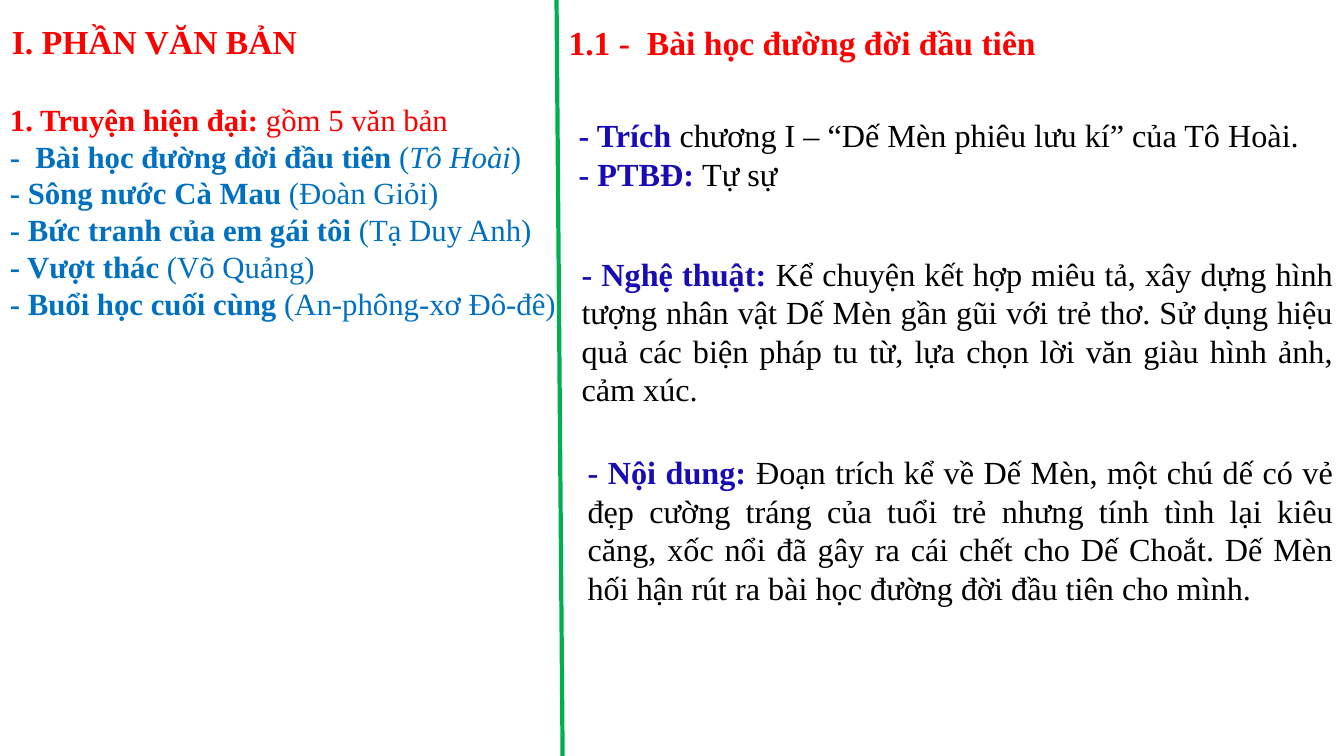
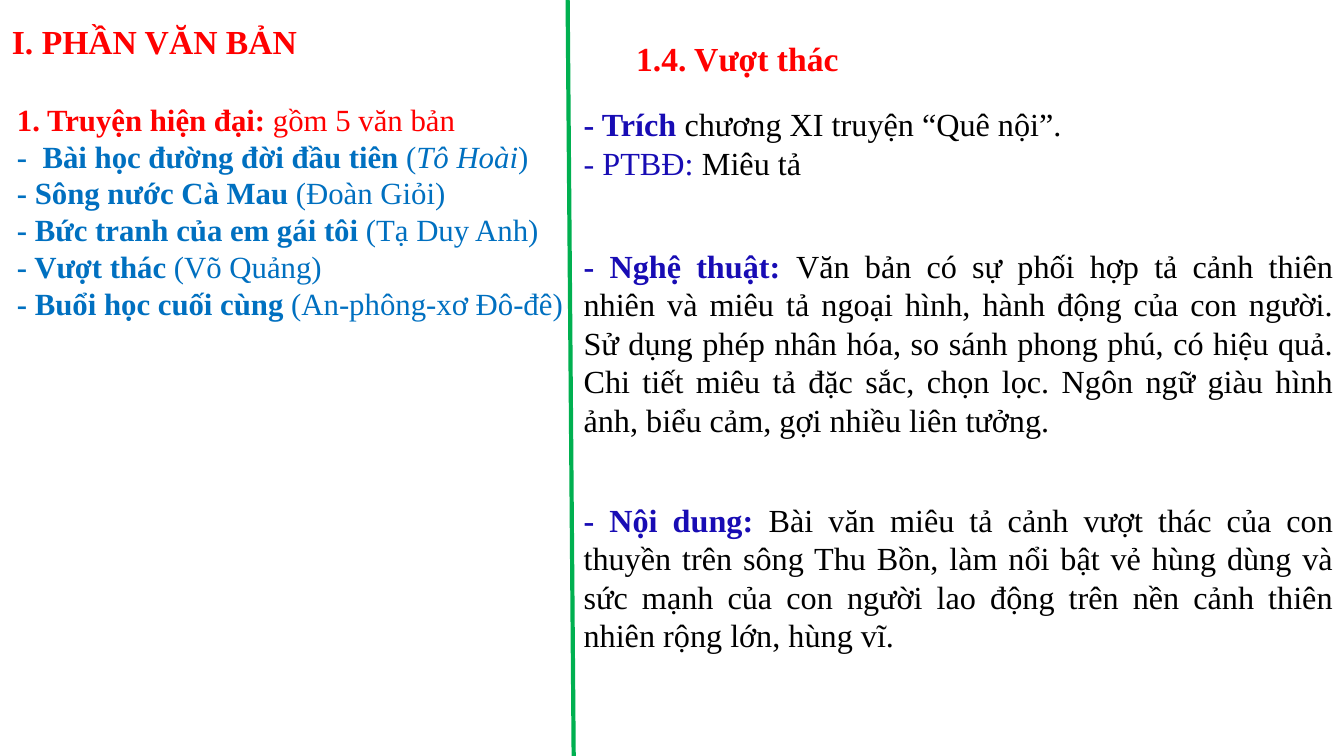
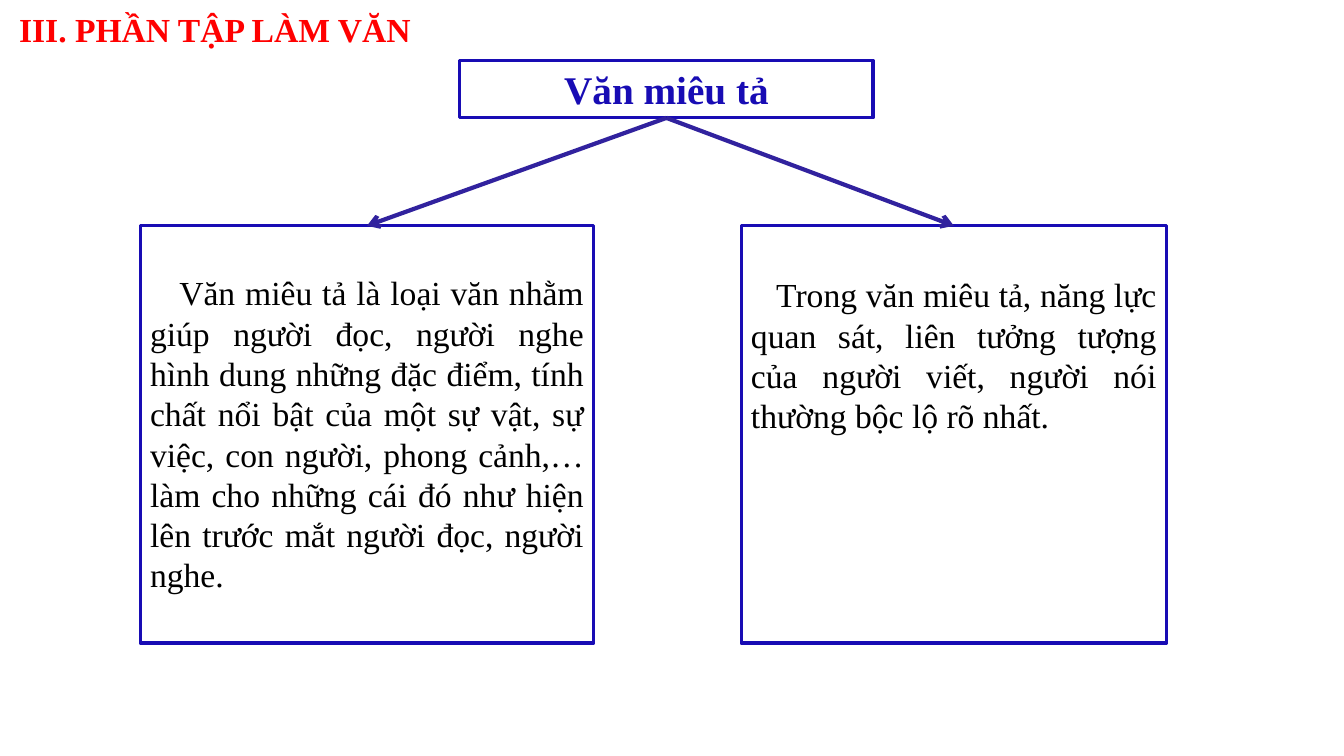
from dataclasses import dataclass, field

from lxml import etree
from pptx import Presentation
from pptx import util as u
from pptx.dml.color import RGBColor
from pptx.enum import shapes, text
from pptx.oxml import ns

# Grid: one column or row is a tenth of an inch.
COLS, ROWS = 133.3, 75
LEFT, MID, FULL = text.PP_ALIGN.LEFT, text.PP_ALIGN.CENTER, text.PP_ALIGN.JUSTIFY


def cell(n):
    return u.Inches(n / 10)


def look(size, color, bold=False, italic=False):
    return dict(size=u.Pt(size), bold=bold, italic=italic, color=color)


@dataclass(frozen=True)
class Theme:
    font: str = "Times New Roman"
    white: str = "FFFFFF"
    blue: str = "180CB4"
    arrow: str = "31229E"
    green: str = "00B050"
    edge: float = 2.25
    rule: float = 3
    looks: dict = field(default_factory=lambda: {
        "head": look(24, "FF0000", True),
        "part": look(22, "FF0000", True),
        "count": look(22, "FF0000"),
        "work": look(22, "0070C0", True),
        "by": look(22, "0070C0"),
        "pen": look(22, "0070C0", italic=True),
        "key": look(23, "180CB4", True),
        "thin": look(23, "180CB4"),
        "body": look(23, "000000"),
        "root": look(28, "180CB4", True),
        "leaf": look(24, "000000"),
    })


T = Theme()

WORKS = [
    [("part", "1. Truyện hiện đại: "), ("count", "gồm 5 văn bản")],
    [("work", "-  Bài học đường đời đầu tiên "), ("by", "("), ("pen", "Tô Hoài"), ("by", ")")],
    [("work", "- Sông nước Cà Mau "), ("by", "(Đoàn Giỏi)")],
    [("work", "- Bức tranh của em gái tôi "), ("by", "(Tạ Duy Anh)")],
    [("work", "- Vượt thác "), ("by", "(Võ Quảng)")],
    [("work", "- Buổi học cuối cùng "), ("by", "(An-phông-xơ Đô-đê)")],
]


def write(shape, paras, align=LEFT, **frame):
    """Fill a shape with paragraphs, each a list of (look, words)."""
    tf = shape.text_frame
    form = dict(word_wrap=True, vertical_anchor=text.MSO_ANCHOR.TOP) | frame
    for name, value in form.items():
        setattr(tf, name, value)
    for i, runs in enumerate(paras):
        para = tf.paragraphs[0] if i == 0 else tf.add_paragraph()
        para.alignment = align
        for name, words in runs:
            run = para.add_run()
            run.text = words
            run.font.name = T.font
            for key, value in T.looks[name].items():
                if key == "color":
                    run.font.color.rgb = RGBColor.from_string(value)
                else:
                    setattr(run.font, key, value)


def label(slide, box, paras, align=LEFT):
    write(slide.shapes.add_textbox(*map(cell, box)), paras, align)


def block(slide, box, fill=None, edge=None):
    shape = slide.shapes.add_shape(shapes.MSO_SHAPE.RECTANGLE, *map(cell, box))
    shape.shadow.inherit = False
    if fill:
        shape.fill.solid()
        shape.fill.fore_color.rgb = RGBColor.from_string(fill)
    else:
        shape.fill.background()
    if edge:
        shape.line.color.rgb = RGBColor.from_string(edge)
        shape.line.width = u.Pt(T.edge)
    else:
        shape.line.fill.background()
    return shape


def stroke(slide, ends, color):
    line = slide.shapes.add_connector(shapes.MSO_CONNECTOR.STRAIGHT, *map(cell, ends))
    line.line.color.rgb = RGBColor.from_string(color)
    line.line.width = u.Pt(T.rule)
    etree.SubElement(line._element.spPr, ns.qn("a:effectLst"))
    return line


def works(slide, box):
    """List of the five texts under the part heading."""
    x, y, w, h = box
    shape = block(slide, (x, y + 5.8, w, 30.3), fill=T.white)
    write(shape, WORKS, vertical_anchor=text.MSO_ANCHOR.MIDDLE)
    label(slide, (0.2, y + 1.6, 36, 5), [[("head", "I. PHẦN VĂN BẢN")]])


def notes(slide, box, items):
    """Divider and notes; an item is (indent, row, height, align, paragraphs)."""
    x, y, w, h = box
    stroke(slide, (x, y, x + 0.6, y + h), T.green)
    for dx, row, high, align, paras in items:
        label(slide, (x + dx, y + row, w - dx, high), paras, align)


def lesson(slide, shift, split, items):
    works(slide, (shift, 0, 61.3, ROWS))
    notes(slide, (split, 0, COLS - split, ROWS), items)


def leaf(slide, box, top, indent, words):
    shape = block(slide, box, edge=T.blue)
    write(shape, [[("leaf", words)]], FULL, margin_top=cell(top))
    props = shape.text_frame.paragraphs[0]._p.get_or_add_pPr()
    props.set("indent", str(cell(indent)))
    return shape


def tree(slide, box, title, leaves):
    """Root over its leaves; a leaf is (column, width, top, indent, words)."""
    x, y, w, h = box
    root = block(slide, (x + 31.7, y, 41, 5.7), edge=T.blue)
    write(root, [[("root", title)]], MID)
    kids = [leaf(slide, (x + col, y + 16.4, wide, h - 16.4), *rest)
            for col, wide, *rest in leaves]
    for kid in kids:
        line = stroke(slide, (0, 0, 1, 1), T.arrow)
        line.begin_connect(root, 2)
        line.end_connect(kid, 0)
        etree.SubElement(line.line._get_or_add_ln(), ns.qn("a:tailEnd"), type="arrow")


def main():
    deck = Presentation()
    deck.slide_width, deck.slide_height = cell(COLS), cell(ROWS)
    first, second, third = (deck.slides.add_slide(deck.slide_layouts[6]) for _ in range(3))

    lesson(first, 0, 55.2, [
        (0.2, 1.7, 5, LEFT, [[("head", "1.1 -  Bài học đường đời đầu tiên")]]),
        (1.5, 24.7, 16.5, FULL, [[
            ("key", "- Nghệ thuật: "),
            ("body", "Kể chuyện kết hợp miêu tả, xây dựng hình tượng nhân vật Dế Mèn "
                     "gần gũi với trẻ thơ. Sử dụng hiệu quả các biện pháp tu từ, "
                     "lựa chọn lời văn giàu hình ảnh, cảm xúc.")]]),
        (2.1, 44.4, 16.5, FULL, [[
            ("key", "- Nội dung: "),
            ("body", "Đoạn trích kể về Dế Mèn, một chú dế có vẻ đẹp cường tráng của "
                     "tuổi trẻ nhưng tính tình lại kiêu căng, xốc nổi đã gây ra cái chết "
                     "cho Dế Choắt. Dế Mèn hối hận rút ra bài học đường đời đầu tiên "
                     "cho mình.")]]),
        (1.2, 11, 8.7, LEFT, [
            [("key", "- Trích "), ("body", "chương I – “Dế Mèn phiêu lưu kí” của Tô Hoài.")],
            [("key", "- PTBĐ: "), ("body", "Tự sự")]]),
    ])

    lesson(second, 0.7, 56.3, [
        (5.8, 3.3, 5, LEFT, [[("head", "1.4. Vượt thác")]]),
        (0.6, 23.9, 24.2, FULL, [[
            ("key", "- Nghệ thuật: "),
            ("body", "Văn bản có sự phối hợp tả cảnh thiên nhiên và miêu tả ngoại hình, "
                     "hành động của con người. Sử dụng phép nhân hóa, so sánh phong phú, "
                     "có hiệu quả. Chi tiết miêu tả đặc sắc, chọn lọc. Ngôn ngữ giàu "
                     "hình ảnh, biểu cảm, gợi nhiều liên tưởng.")]]),
        (0.6, 49.1, 16.5, FULL, [[
            ("key", "- Nội dung: "),
            ("body", "Bài văn miêu tả cảnh vượt thác của con thuyền trên sông Thu Bồn, "
                     "làm nổi bật vẻ hùng dùng và sức mạnh của con người lao động trên "
                     "nền cảnh thiên nhiên rộng lớn, hùng vĩ.")]]),
        (0.6, 9.9, 8.7, FULL, [
            [("key", "- Trích "), ("body", "chương XI truyện “Quê nội”.")],
            [("thin", "- PTBĐ: "), ("body", "Miêu tả")]]),
    ])

    label(third, (0.9, 0.4, 41.2, 5), [[("head", "III. PHẦN TẬP LÀM VĂN")]])
    tree(third, (13.9, 6, 101.8, 57.8), "Văn miêu tả", [
        (0, 45, 4.6, 2.9,
         "Văn miêu tả là loại văn nhằm giúp người đọc, người nghe hình dung những "
         "đặc điểm, tính chất nổi bật của một sự vật, sự việc, con người, phong cảnh,… "
         "làm cho những cái đó như hiện lên trước mắt người đọc, người nghe."),
        (59.6, 42.2, 4.8, 2.5,
         "Trong văn miêu tả, năng lực quan sát, liên tưởng tượng của người viết, "
         "người nói thường bộc lộ rõ nhất."),
    ])
    deck.save("out.pptx")


if __name__ == "__main__":
    main()
